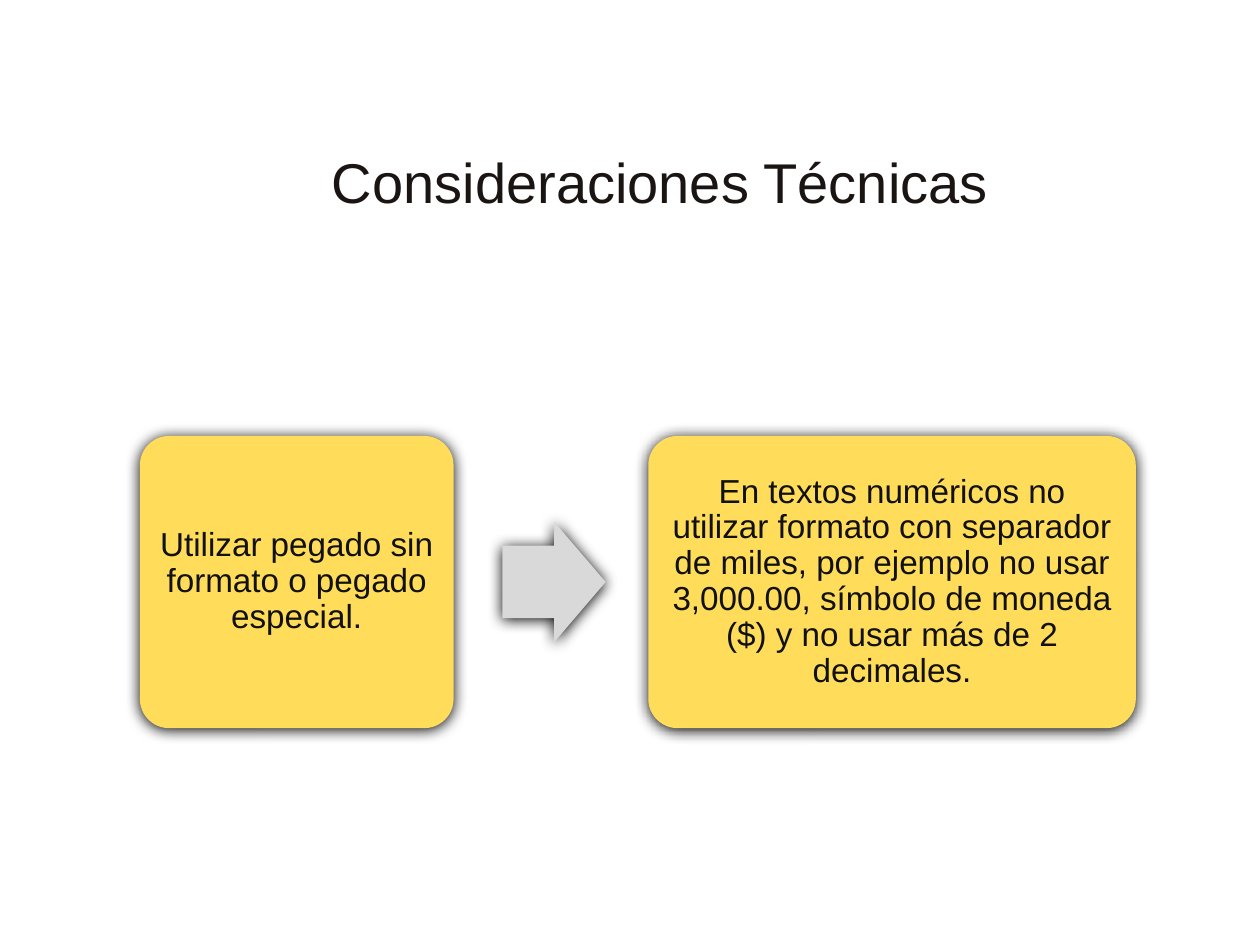
from lxml import etree
from pptx import Presentation, util as u
from pptx.dml.color import RGBColor
from pptx.enum import shapes, text
from pptx.oxml import ns

Pt = u.Pt


def paint(target, color):
    if hasattr(target, "solid"):
        target.solid()
        target.fore_color.rgb = RGBColor.from_string(color)
    else:
        target.color.rgb = RGBColor.from_string(color)


def write(shape, words, size, color, inset_x, inset_y):
    frame = shape.text_frame
    frame.word_wrap = True
    frame.auto_size = text.MSO_AUTO_SIZE.NONE
    frame.vertical_anchor = text.MSO_ANCHOR.MIDDLE
    frame.margin_left = frame.margin_right = Pt(inset_x)
    frame.margin_top = frame.margin_bottom = Pt(inset_y)
    para = frame.paragraphs[0]
    para.alignment = text.PP_ALIGN.CENTER
    para.line_spacing = 0.9
    para.space_before = Pt(0)
    span = para.add_run()
    span.text = words
    span.font.name = "Arial"
    span.font.size = Pt(size)
    paint(span.font, color)


deck = Presentation()
deck.slide_width, deck.slide_height = Pt(720), Pt(540)
page = deck.slides.add_slide(deck.slide_layouts[5])
paint(page.background.fill, "FFFFFF")

title = page.shapes.title
title.left, title.top, title.width, title.height = Pt(69.8), Pt(82.8), Pt(615), Pt(46)
write(title, "Consideraciones Técnicas", 32, "1A1513", 5.76, 2.88)

ROUNDED = shapes.MSO_SHAPE.ROUNDED_RECTANGLE
ARROW = shapes.MSO_SHAPE.RIGHT_ARROW
middle = 332.6
steps = [
    (ROUNDED, 79.9, 179.3, 167, [0.1], "FFDC59",
     "Utilizar pegado sin formato o pegado especial."),
    (ARROW, 287.1, 59, 69, [0.6, 0.5], "D9D9D9", None),
    (ROUNDED, 370.5, 278.6, 167, [0.1], "FFDC59",
     "En textos numéricos no utilizar formato con separador de miles, "
     "por ejemplo no usar 3,000.00, símbolo de moneda ($) y no usar más "
     "de 2 decimales."),
]
for kind, left, width, height, adjustments, color, words in steps:
    box = page.shapes.add_shape(
        kind, Pt(left), Pt(middle - height / 2), Pt(width), Pt(height))
    for index, value in enumerate(adjustments):
        box.adjustments[index] = value
    paint(box.fill, color)
    box.line.fill.background()
    box.shadow.inherit = False
    effects = box.element.spPr.find(ns.qn("a:effectLst"))
    shadow = etree.SubElement(
        effects, ns.qn("a:outerShdw"), blurRad=str(Pt(8.5)), dist=str(Pt(1)),
        dir="5400000", algn="ctr", rotWithShape="0")
    etree.SubElement(shadow, ns.qn("a:srgbClr"), val="000000")
    if words:
        write(box, words, 19, "111111", 5.5, 5.5)

deck.save("out.pptx")
